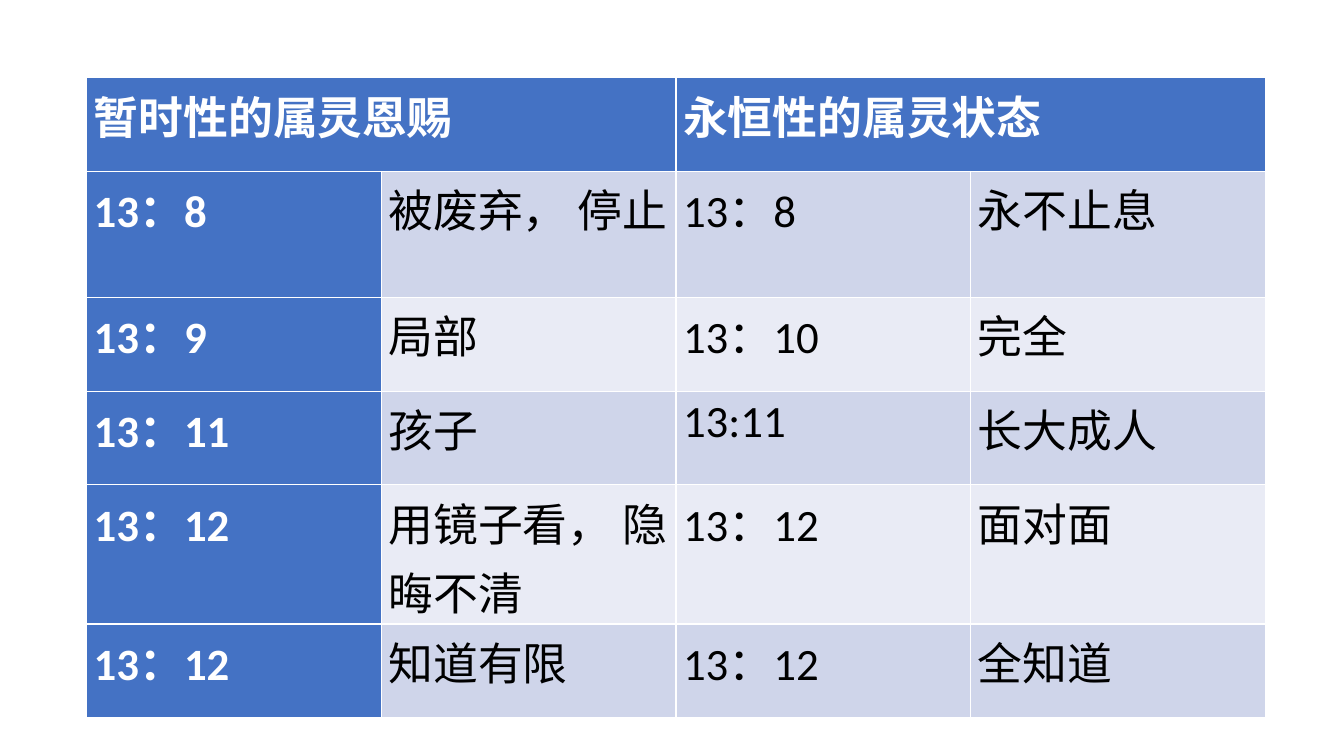
from pptx import Presentation
from pptx.dml.color import RGBColor
from pptx.util import Inches, Pt

COLORS = {
    "accent": "4472C4",
    "odd_band": "CFD5EA",
    "even_band": "E9EBF5",
    "light_text": "FFFFFF",
    "dark_text": "000000",
}
ROWS = [
    ["暂时性的属灵恩赐", "", "永恒性的属灵状态", ""],
    ["13：8", "被废弃， 停止", "13：8", "永不止息"],
    ["13：9", "局部", "13：10", "完全"],
    ["13：11", "孩子", "13:11", "长大成人"],
    ["13：12", "用镜子看， 隐晦不清", "13：12", "面对面"],
    ["13：12", "知道有限", "13：12", "全知道"],
]
ROW_HEIGHTS = [0.93, 1.25, 0.93, 0.93, 1.25, 0.93]

prs = Presentation()
prs.slide_width = Inches(13.33)
prs.slide_height = Inches(7.5)
slide = prs.slides.add_slide(prs.slide_layouts[6])

gifts = slide.shapes.add_table(
    len(ROWS), 4, Inches(0.86), Inches(0.77), Inches(11.69), Inches(sum(ROW_HEIGHTS))
).table
gifts.first_col = True
for row, height in zip(gifts.rows, ROW_HEIGHTS):
    row.height = Inches(height)
for left in (0, 2):
    gifts.cell(0, left).merge(gifts.cell(0, left + 1))

for r, verses in enumerate(ROWS):
    for c, wording in enumerate(verses):
        cell = gifts.cell(r, c)
        heading = r == 0 or c == 0
        band = "odd_band" if r % 2 else "even_band"
        cell.fill.solid()
        cell.fill.fore_color.rgb = RGBColor.from_string(COLORS["accent" if heading else band])
        if cell.is_spanned:
            continue
        cell.margin_left = cell.margin_right = Inches(0.07)
        cell.margin_top = cell.margin_bottom = 0
        cell.text = wording
        paragraph = cell.text_frame.paragraphs[0]
        paragraph.line_spacing = 1.07
        paragraph.font.name = "Calibri"
        paragraph.font.size = Pt(32)
        paragraph.font.bold = heading
        paragraph.font.color.rgb = RGBColor.from_string(
            COLORS["light_text" if heading else "dark_text"]
        )

prs.save("out.pptx")
